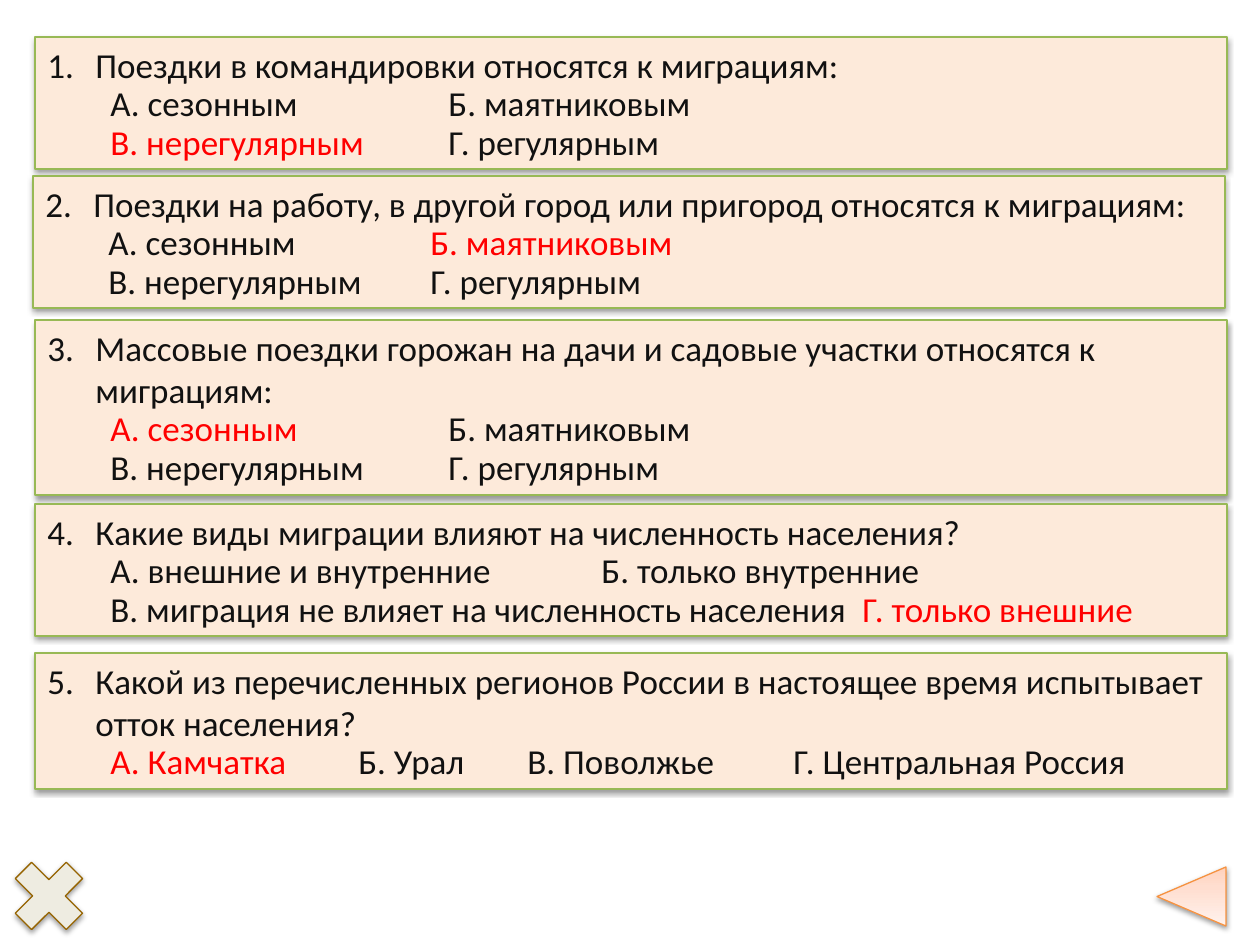
from lxml import etree
from pptx import Presentation
from pptx.dml.color import RGBColor
from pptx.enum.shapes import MSO_SHAPE
from pptx.enum.text import MSO_ANCHOR, MSO_AUTO_SIZE, PP_ALIGN
from pptx.oxml import parse_xml
from pptx.oxml.ns import qn
from pptx.util import Pt

RECT = MSO_SHAPE.RECTANGLE
CROSS = MSO_SHAPE.MATH_MULTIPLY
ARROW = MSO_SHAPE.PENTAGON
TOP = MSO_ANCHOR.TOP
LEFT = PP_ALIGN.LEFT
GROW = MSO_AUTO_SIZE.SHAPE_TO_FIT_TEXT

PX = 914400 / 126
NS = 'xmlns:a="http://schemas.openxmlformats.org/drawingml/2006/main"'
FONT = "Calibri"
OPTION_START = 63
COLORS = {
    "text": "111111",
    "answer": "FF0000",
    "box": "FDEADA",
    "box_line": "98B955",
    "cross": "EEECE1",
    "cross_line": "966400",
    "arrow_line": "F69240",
}
ARROW_STOPS = [(0, "FFD2BD"), (35, "FFDED0"), (100, "FFF2ED")]

MIGRATION_KINDS = [["А. сезонным", "Б. маятниковым"],
                   ["В. нерегулярным", "Г. регулярным"]]
QUESTIONS = [
    {"at": (35, 37, 1192, 132), "tabs": [401], "answer": "В",
     "text": "Поездки в командировки относятся к миграциям:",
     "rows": MIGRATION_KINDS},
    {"at": (33, 176, 1192, 132), "tabs": [385], "answer": "Б",
     "text": "Поездки на работу, в другой город или пригород относятся к миграциям:",
     "rows": MIGRATION_KINDS},
    {"at": (35, 320, 1192, 175), "tabs": [401], "answer": "А",
     "text": "Массовые поездки горожан на дачи и садовые участки относятся к миграциям:",
     "rows": MIGRATION_KINDS},
    {"at": (35, 504, 1192, 132), "tabs": [554, 815], "answer": "Г",
     "text": "Какие виды миграции влияют на численность населения?",
     "rows": [["А. внешние и внутренние", "Б. только внутренние"],
              ["В. миграция не влияет на численность населения", "Г. только внешние"]]},
    {"at": (35, 653, 1192, 136), "tabs": [311, 480, 746], "answer": "А",
     "text": "Какой из перечисленных регионов России в настоящее время испытывает отток населения?",
     "rows": [["А. Камчатка", "Б. Урал", "В. Поволжье", "Г. Центральная Россия"]]},
]


def px(n):
    return round(n * PX)


def rgb(name):
    return RGBColor.from_string(COLORS[name])


def add_shadow(sp):
    sp.shadow.inherit = False
    effects = sp._element.spPr.find(qn("a:effectLst"))
    effects.append(parse_xml(
        f'<a:outerShdw {NS} blurRad="{Pt(3.1)}" dist="{Pt(1.6)}" dir="5400000" rotWithShape="0">'
        '<a:srgbClr val="000000"><a:alpha val="38000"/></a:srgbClr></a:outerShdw>'))


def add_outlined(slide, kind, at, line, fill=None):
    sp = slide.shapes.add_shape(kind, *map(px, at))
    if fill:
        sp.fill.solid()
        sp.fill.fore_color.rgb = rgb(fill)
    sp.line.color.rgb = rgb(line)
    sp.line.width = Pt(0.75)
    add_shadow(sp)
    return sp


def add_run(p, text, color="text"):
    r = p.add_run()
    r.text = text
    r.font.name = FONT
    r.font.size = Pt(20)
    r.font.color.rgb = rgb(color)


def add_options(tf, row, tabs, answer):
    p = tf.add_paragraph()
    p.level = 1
    p.alignment = LEFT
    p.line_spacing = Pt(22)
    pPr = p._p.get_or_add_pPr()
    pPr.set("marL", "0")
    etree.SubElement(pPr, qn("a:buNone"))
    stops = etree.SubElement(pPr, qn("a:tabLst"))
    for tab in [OPTION_START, *tabs]:
        etree.SubElement(stops, qn("a:tab"), pos=str(px(tab)), algn="l")
    for option in row:
        add_run(p, "\t")
        add_run(p, option, "answer" if option.startswith(answer) else "text")


def add_question(slide, number, question):
    sp = add_outlined(slide, RECT, question["at"], "box_line", "box")
    tf = sp.text_frame
    tf.word_wrap = True
    tf.auto_size = GROW
    tf.vertical_anchor = TOP
    p = tf.paragraphs[0]
    p.alignment = LEFT
    pPr = p._p.get_or_add_pPr()
    pPr.set("marL", str(px(48)))
    pPr.set("indent", str(px(-48)))
    etree.SubElement(pPr, qn("a:buFont"), typeface=FONT)
    etree.SubElement(pPr, qn("a:buAutoNum"), type="arabicPeriod", startAt=str(number))
    add_run(p, question["text"])
    for row in question["rows"]:
        add_options(tf, row, question["tabs"], question["answer"])


def add_back_arrow(slide):
    sp = add_outlined(slide, ARROW, (1157, 867, 69, 59), "arrow_line")
    sp.adjustments[0] = 1.167
    sp.rotation = 180
    stops = "".join(f'<a:gs pos="{pos * 1000}"><a:srgbClr val="{color}"/></a:gs>'
                    for pos, color in ARROW_STOPS)
    sp._element.spPr.find(qn("a:prstGeom")).addnext(parse_xml(
        f'<a:gradFill {NS} rotWithShape="1"><a:gsLst>{stops}</a:gsLst>'
        '<a:lin ang="16200000" scaled="1"/></a:gradFill>'))


def main():
    prs = Presentation()
    prs.slide_width, prs.slide_height = px(1260), px(945)
    slide = prs.slides.add_slide(prs.slide_layouts[6])
    add_outlined(slide, CROSS, (0, 847, 98, 98), "cross_line", "cross")
    add_back_arrow(slide)
    for number, question in enumerate(QUESTIONS, 1):
        add_question(slide, number, question)
    prs.save("out.pptx")


if __name__ == "__main__":
    main()
